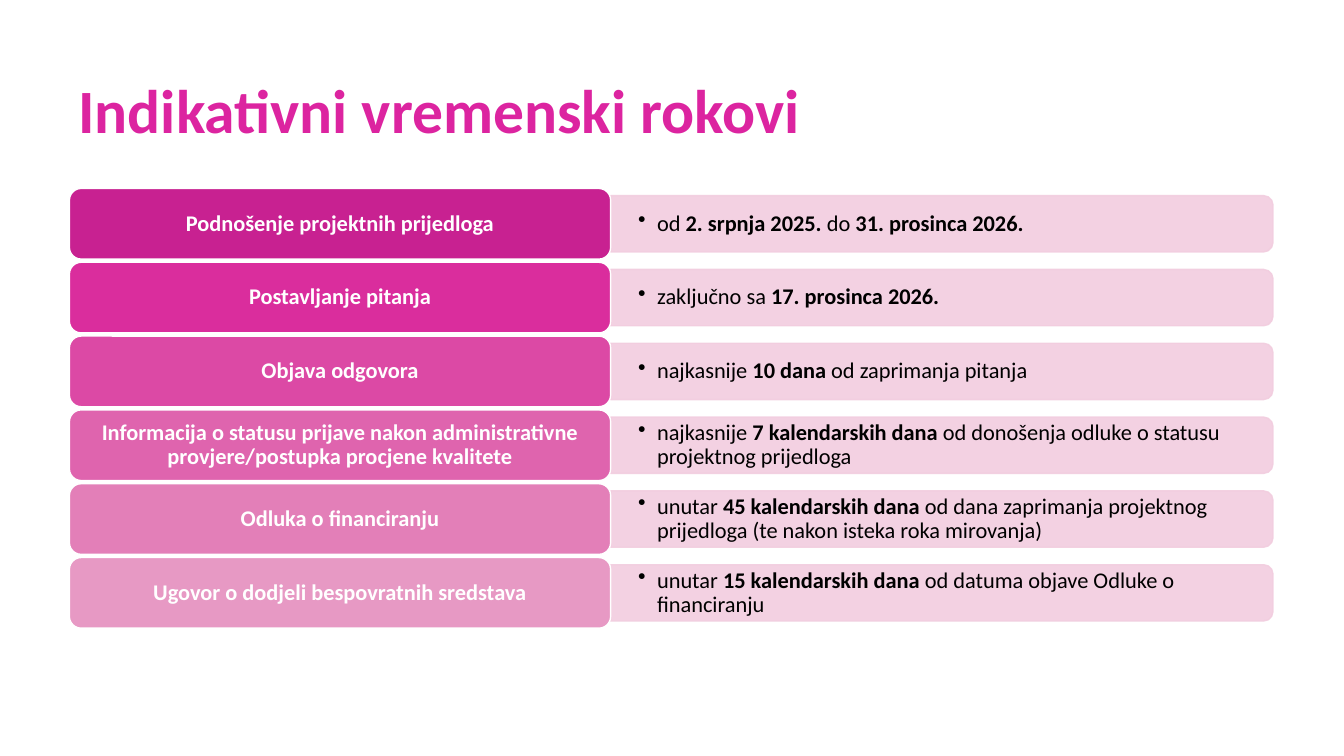
import pptx
import pptx.util
import pptx.dml.color
import pptx.enum.shapes
import pptx.enum.text
import lxml.etree

Cm = pptx.util.Cm
Pt = pptx.util.Pt
Kind = pptx.enum.shapes.MSO_SHAPE
Align = pptx.enum.text.PP_ALIGN
NS = "http://schemas.openxmlformats.org/drawingml/2006/main"
HUES = {"title": "DC24A0", "bar": "F2CDDF", "white": "FFFFFF", "black": "000000"}

# Label, label fill, then plain, bold and plain pieces of the deadline
ROWS = [
    ("Podnošenje projektnih prijedloga", "C82191",
     ["od ", "2. srpnja 2025. ", "do ", "31. prosinca 2026."]),
    ("Postavljanje pitanja", "DA2D9D", ["zaključno sa ", "17. prosinca 2026."]),
    ("Objava odgovora", "DC49A5",
     ["najkasnije ", "10 dana ", "od zaprimanja pitanja"]),
    ("Informacija o statusu prijave nakon administrativne provjere/postupka procjene kvalitete",
     "DF64AE",
     ["najkasnije ", "7 kalendarskih dana ",
      "od donošenja odluke o statusu projektnog prijedloga"]),
    ("Odluka o financiranju", "E37FB8",
     ["unutar ", "45 kalendarskih dana ",
      "od dana zaprimanja projektnog prijedloga (te nakon isteka roka mirovanja)"]),
    ("Ugovor o dodjeli bespovratnih sredstava", "E799C4",
     ["unutar ", "15 kalendarskih dana ", "od datuma objave Odluke o financiranju"]),
]


def paint(shape, fill, line):
    shape.shadow.inherit = False
    shape.fill.solid()
    shape.fill.fore_color.rgb = pptx.dml.color.RGBColor.from_string(fill)
    shape.line.color.rgb = pptx.dml.color.RGBColor.from_string(line)
    shape.line.width = Pt(1)


def write(shape, parts, size, hue, align, pad, first):
    # Bold alternates from piece to piece, starting with the value of first
    frame = shape.text_frame
    form = {"word_wrap": True, "auto_size": pptx.enum.text.MSO_AUTO_SIZE.NONE,
            "vertical_anchor": pptx.enum.text.MSO_ANCHOR.MIDDLE,
            "margin_left": Cm(pad[0]), "margin_right": Cm(pad[0]),
            "margin_top": Cm(pad[1]), "margin_bottom": Cm(pad[1])}
    for key, value in form.items():
        setattr(frame, key, value)
    para = frame.paragraphs[0]
    para.alignment = align
    para.line_spacing = 0.9
    for i, part in enumerate(parts):
        run = para.add_run()
        run.text = part
        looks = {"name": "Calibri", "size": Pt(size), "bold": first ^ (i % 2 == 1)}
        for key, value in looks.items():
            setattr(run.font, key, value)
        run.font.color.rgb = pptx.dml.color.RGBColor.from_string(HUES[hue])
    return para


deck = pptx.Presentation()
deck.slide_width = Cm(33.87)
deck.slide_height = Cm(19.05)
slide = deck.slides.add_slide(deck.slide_layouts[5])

# Title
title = slide.shapes.title
spot = {"left": 1.73, "top": 1.02, "width": 26.85, "height": 3.68}
for key, value in spot.items():
    setattr(title, key, Cm(value))
write(title, ["Indikativni vremenski rokovi"], 44, "title", Align.LEFT, (0.25, 0.13), True)

# Rows: a bar on its side, the deadline over it, and the label
LEFT, TOP, WIDE, HIGH, STEP = 1.75, 4.75, 13.64, 1.78, 1.86
THICK, LONG = 1.42, 16.69
EDGE = LEFT + WIDE
for i, (label, hue, parts) in enumerate(ROWS):
    top = TOP + i * STEP
    mid = top + HIGH / 2

    bar = slide.shapes.add_shape(
        Kind.ROUND_2_SAME_RECTANGLE, Cm(EDGE + (LONG - THICK) / 2), Cm(mid - LONG / 2),
        Cm(THICK), Cm(LONG))
    bar.rotation = 90
    paint(bar, HUES["bar"], HUES["bar"])
    for tint in bar.element.spPr.iter(f"{{{NS}}}srgbClr"):
        lxml.etree.SubElement(tint, f"{{{NS}}}alpha", val="90000")

    note = slide.shapes.add_textbox(Cm(EDGE), Cm(mid - 0.64), Cm(16.61), Cm(1.28))
    para = write(note, parts, 16, "black", Align.LEFT, (0.69, 0.36), False)
    props = para._p.get_or_add_pPr()
    props.set("marL", str(Cm(0.48)))
    props.set("indent", str(-Cm(0.48)))
    lxml.etree.SubElement(props, f"{{{NS}}}buChar", char="•")

    card = slide.shapes.add_shape(
        Kind.ROUNDED_RECTANGLE, Cm(LEFT), Cm(top), Cm(WIDE), Cm(HIGH))
    paint(card, hue, HUES["white"])
    write(card, [label], 16, "white", Align.CENTER, (0.18, 0.09), True)

deck.save("out.pptx")
